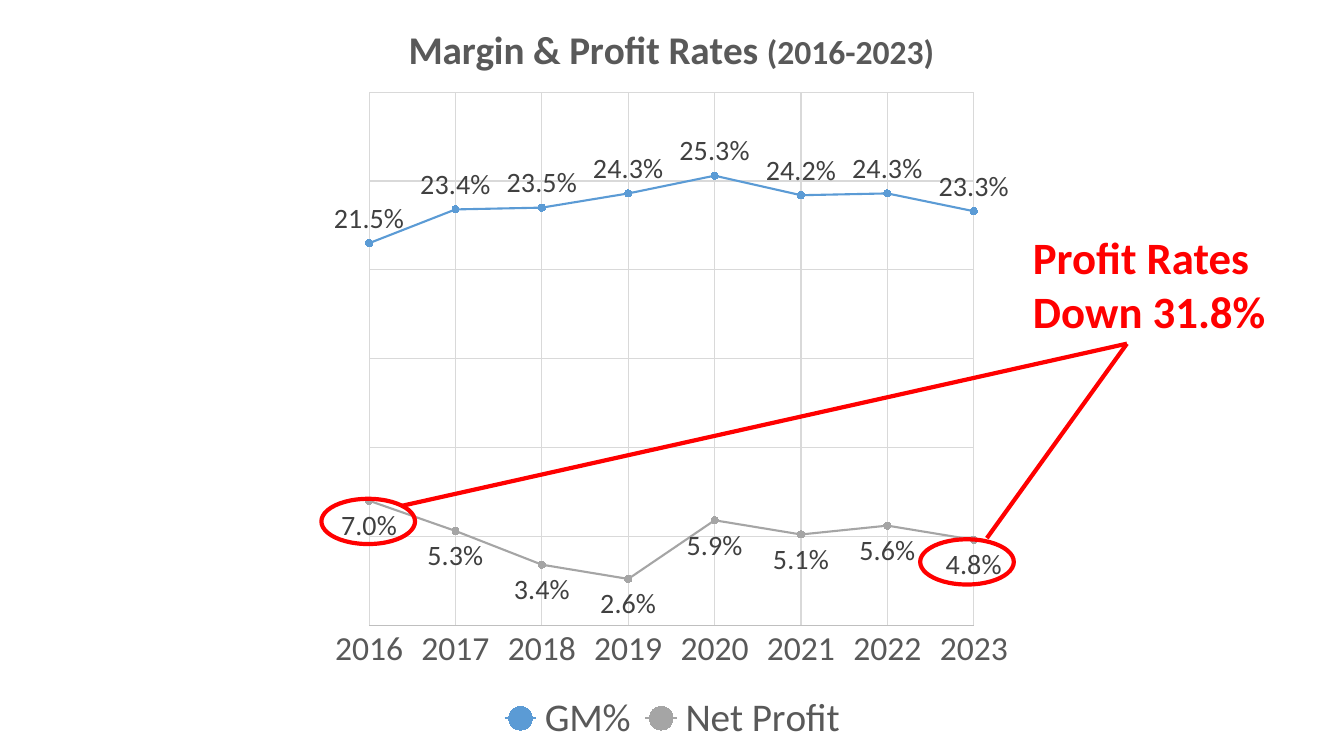
from dataclasses import dataclass

from pptx import Presentation
from pptx.chart.data import XyChartData
from pptx.chart.datalabel import DataLabels
from pptx.dml.color import RGBColor
from pptx.enum.chart import (XL_CHART_TYPE, XL_LABEL_POSITION, XL_LEGEND_POSITION,
                             XL_MARKER_STYLE, XL_TICK_MARK)
from pptx.enum.shapes import MSO_CONNECTOR, MSO_SHAPE
from pptx.oxml.ns import qn
from pptx.oxml.xmlchemy import OxmlElement
from pptx.util import Cm, Pt


@dataclass(frozen=True)
class Theme:
    font: str = "Calibri"
    text: str = "595959"
    label: str = "404040"
    grid: str = "D9D9D9"
    axis: str = "BFBFBF"
    margin: str = "5B9BD5"
    profit: str = "A5A5A5"
    accent: str = "FF0000"
    title_size: int = 28
    period_size: int = 24
    axis_size: int = 24
    legend_size: int = 28
    label_size: int = 20
    callout_size: int = 32


theme = Theme()


def style_font(font, size, color, bold=False):
    font.name, font.size, font.bold = theme.font, Pt(size), bold
    font.color.rgb = RGBColor.from_string(color)


def place(element, index, **fractions):
    """Give a chart part a fixed place, in fractions of the chart."""
    for old in element.findall(qn("c:layout")):
        element.remove(old)
    layout = OxmlElement("c:layout")
    manual = OxmlElement("c:manualLayout")
    layout.append(manual)
    settings = {"xMode": "edge", "yMode": "edge", **fractions}
    if element.tag == qn("c:plotArea"):
        settings = {"layoutTarget": "inner", **settings}
    for name, value in settings.items():
        item = OxmlElement(f"c:{name}")
        item.set("val", str(value))
        manual.append(item)
    element.insert(index, layout)


prs = Presentation()
prs.slide_width, prs.slide_height = Cm(33.87), Cm(19.05)
s = prs.slides.add_slide(prs.slide_layouts[6])

# Chart data
years = range(2016, 2024)
rates = [
    ("GM%", theme.margin, XL_LABEL_POSITION.ABOVE,
     [0.215, 0.234, 0.235, 0.243, 0.253, 0.242, 0.243, 0.233]),
    ("Net Profit", theme.profit, XL_LABEL_POSITION.BELOW,
     [0.07, 0.053, 0.034, 0.026, 0.059, 0.051, 0.056, 0.048]),
]
data = XyChartData()
for name, color, position, values in rates:
    points = data.add_series(name, number_format="0.0%")
    for year, value in zip(years, values):
        points.add_data_point(year, value)
chart = s.shapes.add_chart(XL_CHART_TYPE.XY_SCATTER_LINES, Cm(8.1), Cm(0),
                           Cm(17.68), Cm(19.05), data).chart
style_font(chart.font, 10, theme.text)
plot = chart.plots[0]
plot.vary_by_categories = False

# Chart title
chart.has_title = True
p = chart.chart_title.text_frame.paragraphs[0]
for text, size in [("Margin & Profit Rates ", theme.title_size),
                   ("(2016-2023)", theme.period_size)]:
    r = p.add_run()
    r.text = text
    style_font(r.font, size, theme.text, bold=True)
place(chart.chart_title._element, 1, x=0.12, y=0.03)

# Axes and grid
year_axis, rate_axis = chart.category_axis, chart.value_axis
for axis, low, high, step in [(year_axis, 2016, 2023, 1), (rate_axis, 0, 0.3, 0.05)]:
    axis.minimum_scale, axis.maximum_scale, axis.major_unit = low, high, step
    axis.major_tick_mark = axis.minor_tick_mark = XL_TICK_MARK.NONE
    axis.has_major_gridlines = True
    line = axis.major_gridlines.format.line
    line.width = Pt(0.75)
    line.color.rgb = RGBColor.from_string(theme.grid)
rate_axis.visible = False
year_axis.tick_labels.number_format = "General"
year_axis.tick_labels.number_format_is_linked = False
style_font(year_axis.tick_labels.font, theme.axis_size, theme.text)
year_axis.format.line.width = Pt(0.75)
year_axis.format.line.color.rgb = RGBColor.from_string(theme.axis)
place(chart._chartSpace.chart.plotArea, 0, x=0.068, y=0.122, w=0.862, h=0.705)

# Series and data labels
for series, (name, color, position, values) in zip(plot.series, rates):
    rgb = RGBColor.from_string(color)
    series.format.line.width = Pt(1.5)
    series.format.line.color.rgb = rgb
    marker = series.marker
    marker.style, marker.size = XL_MARKER_STYLE.CIRCLE, 5
    marker.format.fill.solid()
    marker.format.fill.fore_color.rgb = rgb
    marker.format.line.color.rgb = rgb
    labels = DataLabels(series._element.get_or_add_dLbls())
    labels.show_value = True
    labels.position = position
    labels.number_format, labels.number_format_is_linked = "0.0%", False
    style_font(labels.font, theme.label_size, theme.label)

# Legend
chart.has_legend = True
legend = chart.legend
legend.position = XL_LEGEND_POSITION.BOTTOM
legend.include_in_layout = False
style_font(legend.font, theme.legend_size, theme.text)
place(legend._element, 1, x=0.24, y=0.93, w=0.52, h=0.07)

# Callout: circled first and last profit rates, with lines to the message
callout = s.shapes.add_group_shape()
for x, y in [(8.1, 12.57), (23.19, 13.59)]:
    sp = callout.shapes.add_shape(MSO_SHAPE.OVAL, Cm(x), Cm(y), Cm(2.36), Cm(1.14))
    sp.shadow.inherit = False
    sp.fill.background()
    sp.line.width = Pt(3)
    sp.line.color.rgb = RGBColor.from_string(theme.accent)
for x, y in [(10.11, 12.75), (24.87, 13.56)]:
    line = callout.shapes.add_connector(MSO_CONNECTOR.STRAIGHT, Cm(x), Cm(y),
                                        Cm(28.4), Cm(8.66))
    line.line.width = Pt(3)
    line.line.color.rgb = RGBColor.from_string(theme.accent)
    line._element.spPr.append(OxmlElement("a:effectLst"))

tf = callout.shapes.add_textbox(Cm(25.78), Cm(5.66), Cm(6.63), Cm(3)).text_frame
tf.word_wrap = True
tf.text = "Profit Rates\vDown 31.8%"
for r in tf.paragraphs[0].runs:
    style_font(r.font, theme.callout_size, theme.accent, bold=True)

prs.save("out.pptx")
